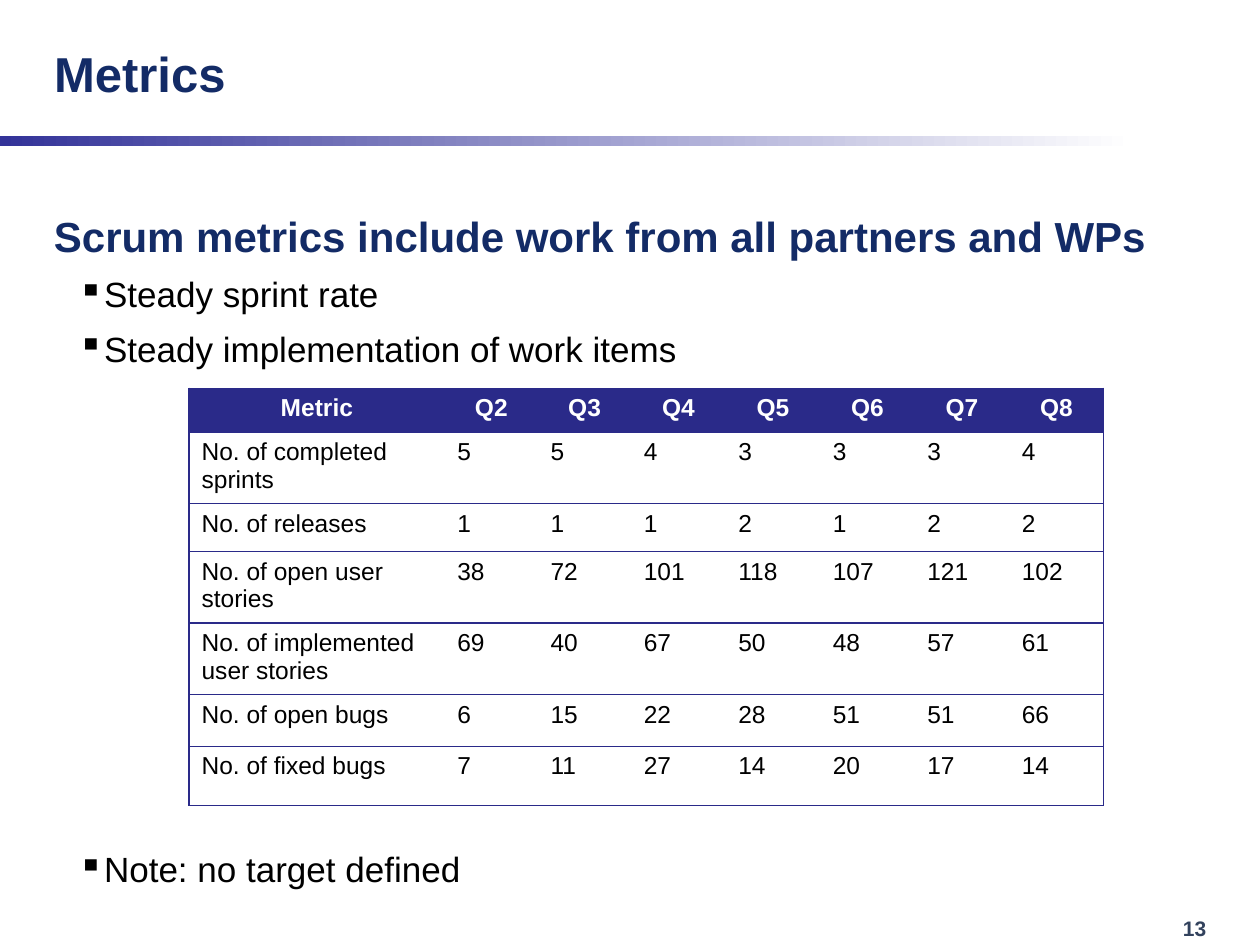
import pptx
import pptx.util
import pptx.dml.color
import pptx.enum.shapes
import pptx.enum.text
import pptx.oxml
import pptx.oxml.ns

Inches = pptx.util.Inches
Pt = pptx.util.Pt
RGBColor = pptx.dml.color.RGBColor
Align = pptx.enum.text.PP_ALIGN
Anchor = pptx.enum.text.MSO_ANCHOR

NAVY = RGBColor(0x13, 0x2B, 0x66)
INDIGO = RGBColor(0x2A, 0x2A, 0x89)
VIOLET = RGBColor(0x33, 0x33, 0x99)
SLATE = RGBColor(0x32, 0x42, 0x5D)
BLACK = RGBColor(0, 0, 0)
WHITE = RGBColor(0xFF, 0xFF, 0xFF)

WIDTHS = [2.03] + [0.74] * 2 + [0.75] * 5
HEIGHTS = [0.35, 0.41, 0.38, 0.44, 0.41, 0.41, 0.47]
ROWS = [
    ["Metric"] + [f"Q{n}" for n in range(2, 9)],
    ["No. of completed sprints", 5, 5, 4, 3, 3, 3, 4],
    ["No. of releases", 1, 1, 1, 2, 1, 2, 2],
    ["No. of open user stories", 38, 72, 101, 118, 107, 121, 102],
    ["No. of implemented user stories", 69, 40, 67, 50, 48, 57, 61],
    ["No. of open bugs", 6, 15, 22, 28, 51, 51, 66],
    ["No. of fixed bugs", 7, 11, 27, 14, 20, 17, 14],
]


def add_run(para, text, size, color, bold=False):
    run = para.add_run()
    run.text = text
    run.font.name = "Arial"
    run.font.size = Pt(size)
    run.font.bold = bold
    run.font.color.rgb = color


def add_title(slide, text):
    title = slide.shapes.title
    title.left, title.top = Inches(0.33), Inches(0.08)
    title.width, title.height = Inches(7.08), Inches(1)
    title.text_frame.vertical_anchor = Anchor.MIDDLE
    para = title.text_frame.paragraphs[0]
    para.alignment = Align.LEFT
    add_run(para, text, 28, NAVY, True)


def add_band(slide):
    band = slide.shapes.add_shape(
        pptx.enum.shapes.MSO_SHAPE.RECTANGLE,
        Inches(0), Inches(1.08), Inches(10), Inches(0.08))
    band.shadow.inherit = False
    band.line.fill.background()
    band.fill.gradient()
    band.fill.gradient_angle = 0
    for stop, place, color in zip(
            band.fill.gradient_stops, (0, 0.9), (VIOLET, WHITE)):
        stop.position = place
        stop.color.rgb = color


def add_box(slide, left, top, width, height):
    box = slide.shapes.add_textbox(
        Inches(left), Inches(top), Inches(width), Inches(height))
    box.text_frame.word_wrap = True
    return box.text_frame


def add_bullet(para, text):
    props = para._p.get_or_add_pPr()
    props.set("marL", str(Inches(0.39)))
    props.set("indent", str(Inches(-0.2)))
    props.append(pptx.oxml.parse_xml(
        f'<a:buChar {pptx.oxml.ns.nsdecls("a")} char="▪"/>'))
    add_run(para, text, 20, BLACK)


def set_edge(cell, side, shown):
    fill = (f'<a:solidFill><a:srgbClr val="{INDIGO}"/></a:solidFill>'
            if shown else "<a:noFill/>")
    cell._tc.get_or_add_tcPr().append(pptx.oxml.parse_xml(
        f'<a:ln{side} {pptx.oxml.ns.nsdecls("a")} w="{Pt(0.75)}">'
        f"{fill}</a:ln{side}>"))


def fill_cell(cell, text, head, first, last):
    edges = {"L": first, "R": last, "T": True, "B": True}
    for side, shown in edges.items():
        set_edge(cell, side, shown)
    para = cell.text_frame.paragraphs[0]
    if head:
        cell.fill.solid()
        cell.fill.fore_color.rgb = INDIGO
        para.alignment = Align.CENTER
    else:
        cell.fill.background()
    add_run(para, text, 14, WHITE if head else BLACK, head)


def add_grid(slide):
    table = slide.shapes.add_table(
        len(ROWS), len(WIDTHS), Inches(1.5), Inches(3.08),
        Inches(sum(WIDTHS)), Inches(sum(HEIGHTS))).table
    table.horz_banding = False
    for col, width in zip(table.columns, WIDTHS):
        col.width = Inches(width)
    for r, values in enumerate(ROWS):
        table.rows[r].height = Inches(HEIGHTS[r])
        for c, value in enumerate(values):
            fill_cell(table.cell(r, c), str(value), r == 0,
                      c == 0, c == len(values) - 1)


def main():
    deck = pptx.Presentation()
    deck.slide_width, deck.slide_height = Inches(10), Inches(7.5)
    slide = deck.slides.add_slide(deck.slide_layouts[5])
    add_band(slide)
    add_title(slide, "Metrics")
    body = add_box(slide, 0.33, 1.62, 9.33, 1.4)
    add_run(body.paragraphs[0],
            "Scrum metrics include work from all partners and WPs",
            24, NAVY, True)
    for text in ("Steady sprint rate", "Steady implementation of work items"):
        para = body.add_paragraph()
        para.space_before = Pt(7)
        add_bullet(para, text)
    add_grid(slide)
    note = add_box(slide, 0.33, 6.68, 9.33, 0.45)
    add_bullet(note.paragraphs[0], "Note: no target defined")
    number = add_box(slide, 9.29, 7.22, 0.64, 0.3)
    add_run(number.paragraphs[0], "13", 12, SLATE, True)
    deck.save("out.pptx")


if __name__ == "__main__":
    main()
